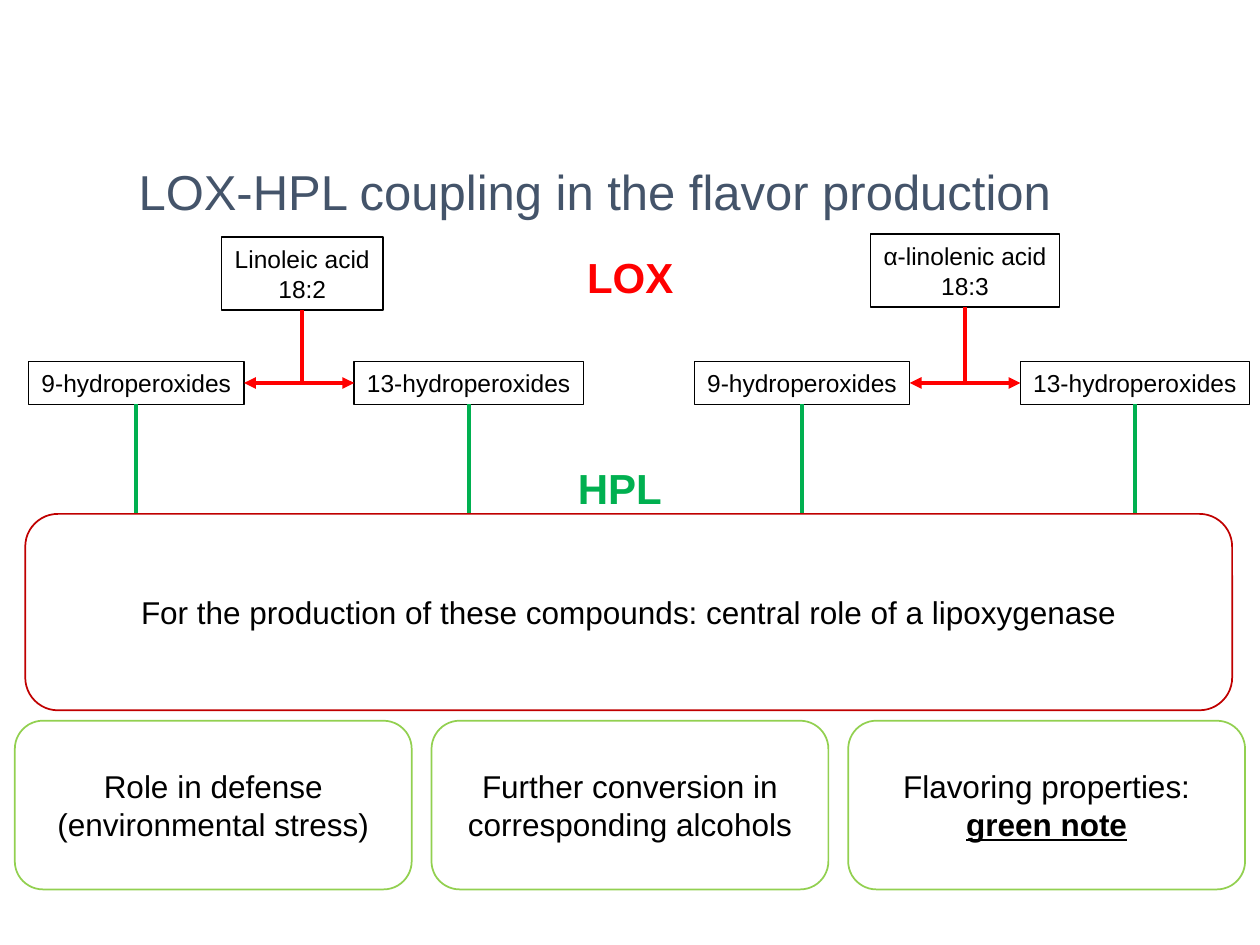
from lxml import etree
from pptx import Presentation
from pptx.dml.color import RGBColor
from pptx.enum import shapes, text
from pptx.oxml.ns import qn
from pptx.util import Cm, Pt

BLACK = RGBColor(0x00, 0x00, 0x00)
WHITE = RGBColor(0xFF, 0xFF, 0xFF)
RED = RGBColor(0xFF, 0x00, 0x00)
GREEN = RGBColor(0x00, 0xB0, 0x50)
DARK_RED = RGBColor(0xC0, 0x00, 0x00)
LIME = RGBColor(0x92, 0xD0, 0x50)
SLATE = RGBColor(0x44, 0x54, 0x6A)
FONT = "Arial"

# Lengths in centimetres; boxes are left, top, width, height.
TITLE = "LOX-HPL coupling in the flavor production"
PATHWAYS = [
    {"acid": ["Linoleic acid", "18:2"], "acid_box": (4.47, 4.78, 3.25, 1.47),
     "products": [("9-hydroperoxides", 0.58, 4.34), ("13-hydroperoxides", 7.14, 4.62)]},
    {"acid": ["α-linolenic acid", "18:3"], "acid_box": (17.55, 4.72, 3.81, 1.47),
     "products": [("9-hydroperoxides", 14.0, 4.34), ("13-hydroperoxides", 20.57, 4.62)]},
]
ENZYMES = [("LOX", RED, 10.9, 4.95), ("HPL", GREEN, 10.69, 9.19)]
SUMMARY = "For the production of these compounds: central role of a lipoxygenase"
OUTCOMES = [
    ["Role in defense", "(environmental stress)"],
    ["Further conversion in corresponding alcohols"],
    ["Flavoring properties:", "green note"],
]
EMPHASIS = "green note"
PRODUCT_TOP, PRODUCT_HEIGHT = 7.29, 0.86
HPL_ARROW_END = 11.68
OUTCOME_LEFT, OUTCOME_PITCH = 0.3, 8.4

prs = Presentation()
prs.slide_width, prs.slide_height = Cm(25.4), Cm(19.05)
slide = prs.slides.add_slide(prs.slide_layouts[5])


def add_box(lines, box, size, line=None, width=0.75, fill=WHITE, color=BLACK,
            rounded=False, bold=None, wrap=True):
    kind = shapes.MSO_SHAPE.ROUNDED_RECTANGLE if rounded else shapes.MSO_SHAPE.RECTANGLE
    shape = slide.shapes.add_shape(kind, *map(Cm, box))
    shape.shadow.inherit = False
    if fill is None:
        shape.fill.background()
    else:
        shape.fill.solid()
        shape.fill.fore_color.rgb = fill
    if line is None:
        shape.line.fill.background()
    else:
        shape.line.color.rgb = line
        shape.line.width = Pt(width)
    frame = shape.text_frame
    frame.word_wrap = wrap
    frame.vertical_anchor = text.MSO_ANCHOR.MIDDLE
    for i, words in enumerate(lines):
        paragraph = frame.add_paragraph() if i else frame.paragraphs[0]
        paragraph.text = words
        paragraph.alignment = text.PP_ALIGN.CENTER
        font = paragraph.font
        font.name, font.size, font.bold = FONT, Pt(size), bold
        font.color.rgb = color
        if words == EMPHASIS:
            font.bold = font.underline = True
    return shape


def add_line(color, start, end, heads=()):
    """Draw from start to end in EMU; heads lists headEnd and tailEnd."""
    line = slide.shapes.add_connector(shapes.MSO_CONNECTOR.STRAIGHT, *start, *end)
    line.line.color.rgb = color
    line.line.width = Pt(2.25)
    for head in heads:
        etree.SubElement(line.line._get_or_add_ln(), qn("a:" + head), type="triangle")
    etree.SubElement(line._element.spPr, qn("a:effectLst"))
    return line


for pathway in PATHWAYS:
    products = [add_box([name], (left, PRODUCT_TOP, width, PRODUCT_HEIGHT), 14,
                        BLACK, fill=None, wrap=False)
                for name, left, width in pathway["products"]]
    acid = add_box(pathway["acid"], pathway["acid_box"], 14, BLACK, wrap=False)

    middle = Cm(PRODUCT_TOP + PRODUCT_HEIGHT / 2)
    center = acid.left + acid.width // 2
    stem = add_line(RED, (center, acid.top + acid.height), (center, middle))
    stem.begin_connect(acid, 2)

    nine, thirteen = products
    split = add_line(RED, (nine.left + nine.width, middle), (thirteen.left, middle),
                     ("headEnd", "tailEnd"))
    split.begin_connect(nine, 3)
    split.end_connect(thirteen, 1)

    for product in products:
        x = product.left + product.width // 2
        arrow = add_line(GREEN, (x, product.top + product.height),
                         (x, Cm(HPL_ARROW_END)), ("tailEnd",))
        arrow.begin_connect(product, 2)

for name, color, left, top in ENZYMES:
    add_box([name], (left, top, 3.61, 1.27), 24, color=color, bold=True)

for i, outcome in enumerate(OUTCOMES):
    add_box(outcome, (OUTCOME_LEFT + i * OUTCOME_PITCH, 14.53, 8, 3.4), 18,
            LIME, 1, rounded=True)
add_box([SUMMARY], (0.51, 10.36, 24.33, 3.96), 18, DARK_RED, 1, rounded=True)

title = slide.shapes.title
title.left, title.top, title.width, title.height = map(Cm, (2.54, 3.12, 20.29, 1.45))
title.text_frame.text = TITLE
title.text_frame.vertical_anchor = text.MSO_ANCHOR.MIDDLE
heading = title.text_frame.paragraphs[0]
heading.alignment = text.PP_ALIGN.LEFT
heading.font.name, heading.font.size = FONT, Pt(28)
heading.font.color.rgb = SLATE

prs.save("out.pptx")
